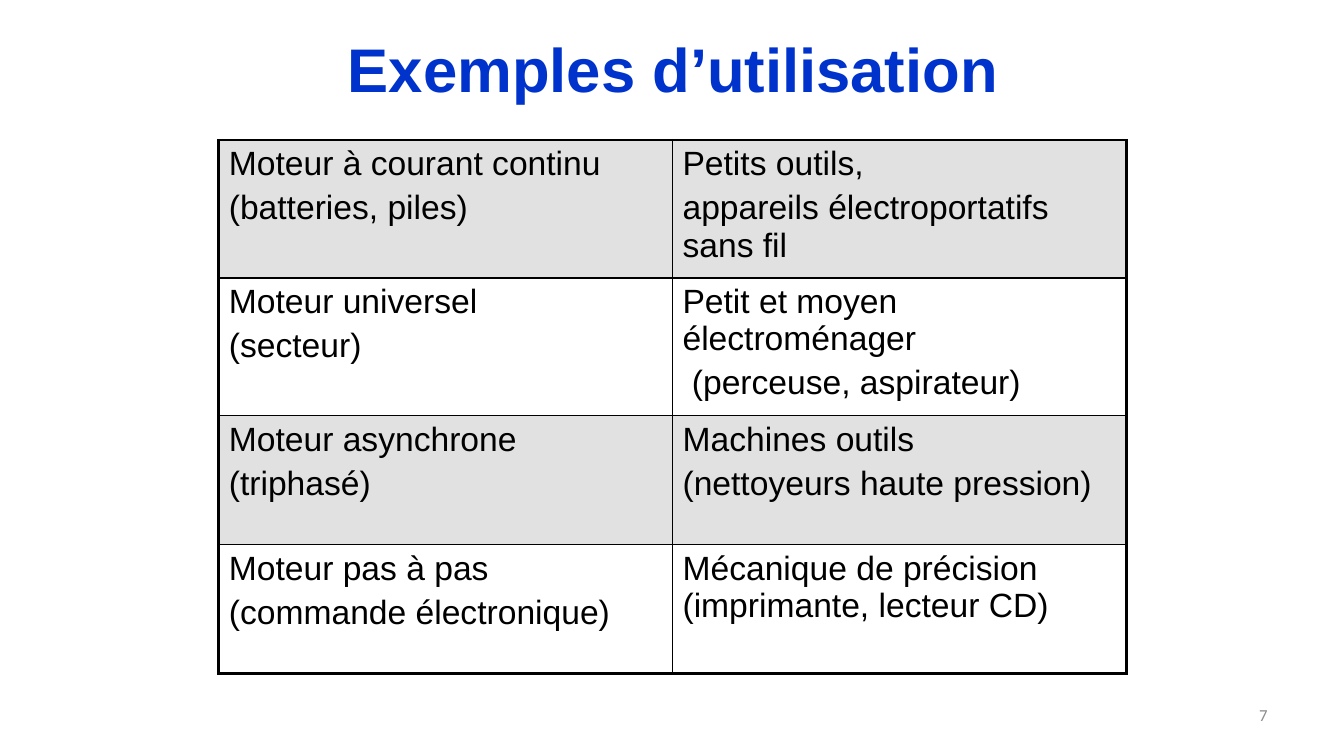
from lxml import etree
from pptx import Presentation
from pptx.dml.color import RGBColor
from pptx.enum.text import MSO_ANCHOR, PP_ALIGN
from pptx.oxml.ns import qn
from pptx.util import Inches, Pt

MIDDLE = MSO_ANCHOR.MIDDLE
LEFT, CENTER, RIGHT = PP_ALIGN.LEFT, PP_ALIGN.CENTER, PP_ALIGN.RIGHT
BLUE = RGBColor(0x00, 0x33, 0xCC)
BLACK = RGBColor(0x00, 0x00, 0x00)
GREY = RGBColor(0x8C, 0x8C, 0x8C)
BAND = RGBColor(0xE1, 0xE1, 0xE1)

TITLE = {"name": "Arial", "size": Pt(44), "bold": True}
BODY = {"name": "Arial", "size": Pt(24), "bold": False}
NUMBER = {"name": "Calibri", "size": Pt(12), "bold": False}
COL_W, ROW_H = 4.5, 1.28
THICK, THIN = 2.25, 1

ROWS = [
    (["Moteur à courant continu", "(batteries, piles)"],
     ["Petits outils,", "appareils électroportatifs sans fil"]),
    (["Moteur universel", "(secteur)"],
     ["Petit et moyen électroménager", " (perceuse, aspirateur)"]),
    (["Moteur asynchrone", "(triphasé)"],
     ["Machines outils", "(nettoyeurs haute pression)"]),
    (["Moteur pas à pas", "(commande électronique)"],
     ["Mécanique de précision (imprimante, lecteur CD)"]),
]


def write(tf, lines, fmt, color, align):
    tf.word_wrap = True
    for i, line in enumerate(lines):
        p = tf.add_paragraph() if i else tf.paragraphs[0]
        p.alignment = align
        p.space_before = Pt(4.8 if i else 0)
        r = p.add_run()
        r.text = line
        for key, value in fmt.items():
            setattr(r.font, key, value)
        r.font.color.rgb = color


def add_border(cell, side, width):
    ln = etree.SubElement(cell._tc.get_or_add_tcPr(), qn("a:ln" + side), w=str(Pt(width)))
    fill = etree.SubElement(ln, qn("a:solidFill"))
    etree.SubElement(fill, qn("a:srgbClr"), val=str(BLACK))


prs = Presentation()
prs.slide_width, prs.slide_height = Inches(13.33), Inches(7.5)
s = prs.slides.add_slide(prs.slide_layouts[6])

for box, text, fmt, color, align in [
    ((9.56, 6.83, 3.11, 0.52), "7", NUMBER, GREY, RIGHT),
    ((2.18, 0.05, 9, 1.25), "Exemples d’utilisation", TITLE, BLUE, CENTER),
]:
    tf = s.shapes.add_textbox(*map(Inches, box)).text_frame
    tf.vertical_anchor = MIDDLE
    write(tf, [text], fmt, color, align)

n_rows, n_cols = len(ROWS), len(ROWS[0])
table = s.shapes.add_table(n_rows, n_cols, Inches(2.17), Inches(1.39),
                           Inches(n_cols * COL_W), Inches(n_rows * ROW_H)).table
table.first_row = table.horz_banding = False
for col in table.columns:
    col.width = Inches(COL_W)

for i, row in enumerate(ROWS):
    table.rows[i].height = Inches(ROW_H)
    for j, lines in enumerate(row):
        cell = table.cell(i, j)
        outer = {"L": j == 0, "R": j == n_cols - 1, "T": i == 0, "B": i == n_rows - 1}
        for side, edge in outer.items():
            add_border(cell, side, THICK if edge else THIN)
        if i % 2 == 0:
            cell.fill.solid()
            cell.fill.fore_color.rgb = BAND
        else:
            cell.fill.background()
        write(cell.text_frame, lines, BODY, BLACK, LEFT)

prs.save("out.pptx")
